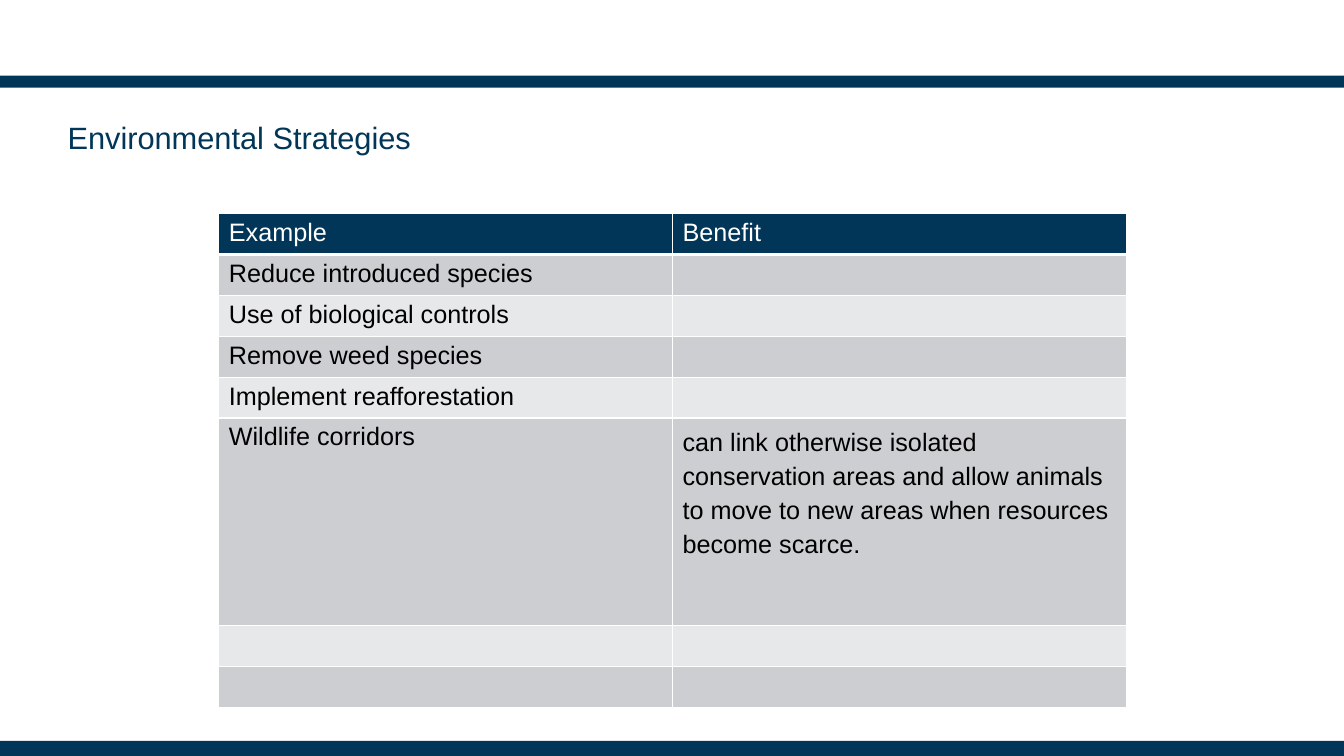
from lxml import etree
from pptx import Presentation
from pptx.dml.color import RGBColor
from pptx.enum.shapes import MSO_SHAPE
from pptx.enum.text import MSO_ANCHOR, PP_ALIGN
from pptx.oxml.ns import qn
from pptx.util import Inches, Pt

RECT = MSO_SHAPE.RECTANGLE
MIDDLE = MSO_ANCHOR.MIDDLE
LEFT = PP_ALIGN.LEFT
NAVY = RGBColor(0x01, 0x36, 0x58)
WHITE = RGBColor(0xFF, 0xFF, 0xFF)
BLACK = RGBColor(0x00, 0x00, 0x00)
DARK_BAND = RGBColor(0xCC, 0xCE, 0xD1)
LIGHT_BAND = RGBColor(0xE7, 0xE8, 0xEA)

ROWS = [
    ("Example", "Benefit"),
    ("Reduce introduced species", ""),
    ("Use of biological controls", ""),
    ("Remove weed species", ""),
    ("Implement reafforestation", ""),
    ("Wildlife corridors",
     "can link otherwise isolated conservation areas and allow animals "
     "to move to new areas when resources become scarce."),
    ("", ""),
    ("", ""),
]
CORRIDOR_ROW = 5


def set_font(font, size, color):
    for name, value in {"name": "Arial", "size": Pt(size), "bold": False}.items():
        setattr(font, name, value)
    font.color.rgb = color


def add_border(cell, side, width):
    ln = etree.SubElement(cell._tc.get_or_add_tcPr(), qn(f"a:ln{side}"), w=str(Pt(width)))
    fill = etree.SubElement(ln, qn("a:solidFill"))
    etree.SubElement(fill, qn("a:srgbClr"), val=str(WHITE))


prs = Presentation()
prs.slide_width, prs.slide_height = Inches(13.33), Inches(7.5)
s = prs.slides.add_slide(prs.slide_layouts[5])

# Top and bottom bars
for top, height in ((0.75, 0.12), (7.35, 0.15)):
    bar = s.shapes.add_shape(RECT, 0, Inches(top), prs.slide_width, Inches(height))
    bar.shadow.inherit = False
    bar.fill.solid()
    bar.fill.fore_color.rgb = NAVY
    bar.line.fill.background()

# Title
title = s.shapes.title
title.left, title.top = Inches(0.67), Inches(1)
title.width, title.height = Inches(12), Inches(0.75)
tf = title.text_frame
for name, value in {"margin_left": 0, "margin_top": 0, "margin_right": 0,
                    "margin_bottom": 0, "vertical_anchor": MIDDLE,
                    "word_wrap": True}.items():
    setattr(tf, name, value)
p = tf.paragraphs[0]
p.alignment = LEFT
p.line_spacing = Pt(24)
r = p.add_run()
r.text = "Environmental Strategies"
set_font(r.font, 22, NAVY)

# Strategy table
row_height = int(Inches(2.84) / 7)
table = s.shapes.add_table(len(ROWS), 2, Inches(2.17), Inches(2.12),
                           Inches(9), row_height * len(ROWS)).table
for column in table.columns:
    column.width = Inches(4.5)
for i, texts in enumerate(ROWS):
    table.rows[i].height = Inches(2.06) if i == CORRIDOR_ROW else row_height
    band = NAVY if i == 0 else DARK_BAND if i % 2 else LIGHT_BAND
    for j, text in enumerate(texts):
        cell = table.cell(i, j)
        for side in "LRTB":
            add_border(cell, side, 3 if i == 0 and side == "B" else 1)
        cell.fill.solid()
        cell.fill.fore_color.rgb = band
        if text:
            p = cell.text_frame.paragraphs[0]
            if (i, j) == (CORRIDOR_ROW, 1):
                p.line_spacing = 1.2
            r = p.add_run()
            r.text = text
            set_font(r.font, 18, WHITE if i == 0 else BLACK)

prs.save("out.pptx")
